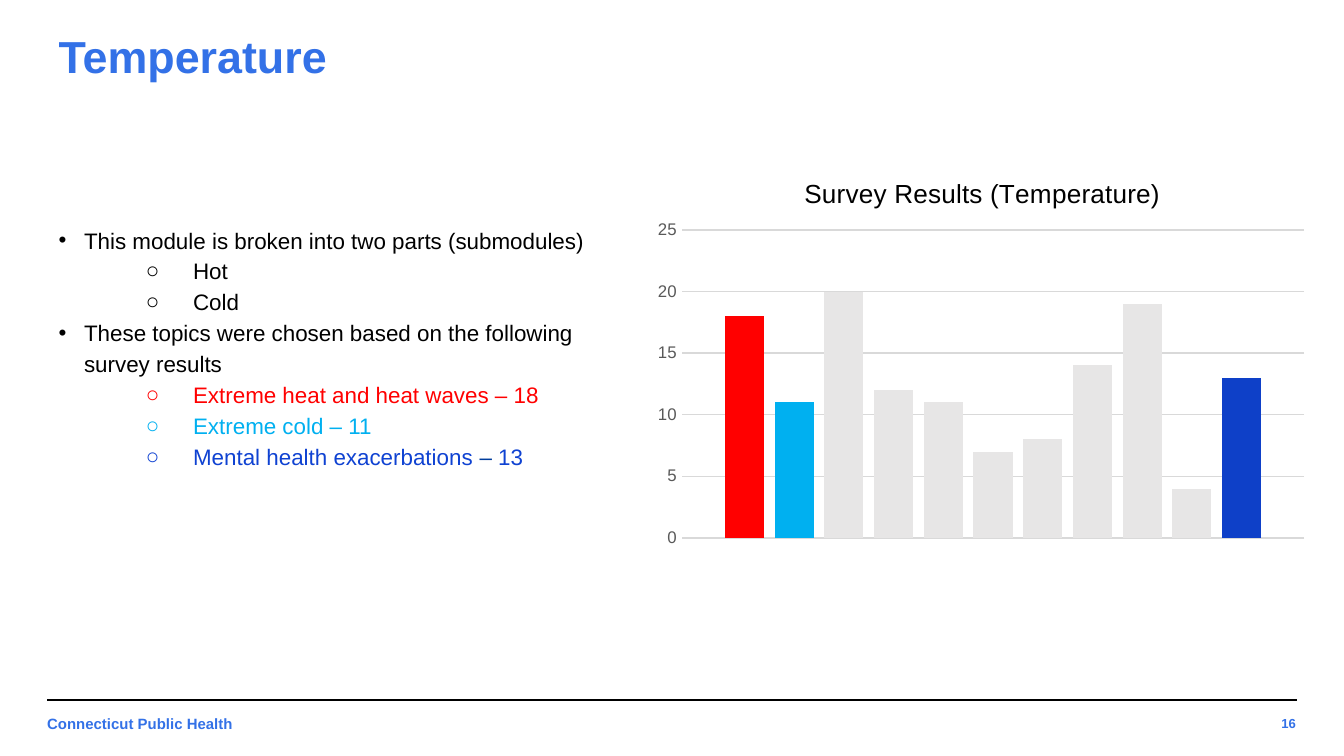
from dataclasses import dataclass
from lxml.etree import SubElement
from pptx import Presentation
from pptx.chart.data import CategoryChartData as ChartData
from pptx.dml.color import RGBColor as RGB
from pptx.enum.chart import XL_CHART_TYPE as Kind, XL_TICK_MARK as Tick
from pptx.enum.text import MSO_ANCHOR as Anchor, PP_ALIGN as Align
from pptx.oxml import parse_xml
from pptx.oxml.ns import nsdecls, qn
from pptx.util import Cm, Pt


@dataclass(frozen=True)
class Theme:
    """Hold the colours and type sizes of the slide."""
    font: str = "Arial"
    brand: str = "3371E7"
    ink: str = "000000"
    hot: str = "FF0000"
    cold: str = "00B0F0"
    mind: str = "0F42D2"
    dash: str = "003D9C"
    deep: str = "0E40C8"
    pale: str = "E7E6E6"
    grid: str = "D9D9D9"
    tick: str = "595959"
    title: float = 24
    head: float = 14
    body: float = 12
    axis: float = 9
    foot: float = 8
    page: float = 7


T = Theme()
POINTS = [
    (0, [("This module is broken into two parts (submodules)", T.ink)]),
    (1, [("Hot", T.ink)]),
    (1, [("Cold", T.ink)]),
    (0, [("These topics were chosen based on the following survey results", T.ink)]),
    (1, [("Extreme heat and heat waves – 18", T.hot)]),
    (1, [("Extreme cold – 11", T.cold)]),
    (1, [("Mental health exacerbations ", T.mind), ("– ", T.dash), ("13", T.mind)]),
]
VOTES = [18, 11, 20, 12, 11, 7, 8, 14, 19, 4, 13]
TINTS = {0: T.hot, 1: T.cold, 10: T.deep}


def style(font, size, tint, bold=False):
    """Set the face, size, colour and weight of a font."""
    font.name, font.size, font.bold = T.font, Pt(size), bold
    font.color.rgb = RGB.from_string(tint)


def add_run(para, text, size, tint, bold=False):
    """Append one styled run to a paragraph."""
    run = para.add_run()
    run.text = text
    style(run.font, size, tint, bold)


def add_frame(slide, box, anchor=Anchor.TOP):
    """Add a wrapping text box and return its text frame."""
    frame = slide.shapes.add_textbox(*map(Cm, box)).text_frame
    frame.word_wrap = True
    frame.vertical_anchor = anchor
    frame.margin_left = frame.margin_right = Cm(0.25)
    frame.margin_top = frame.margin_bottom = Cm(0.25)
    return frame


def add_label(slide, box, text, size, anchor=Anchor.MIDDLE, align=Align.LEFT):
    """Place one bold line in the brand colour."""
    para = add_frame(slide, box, anchor).paragraphs[0]
    para.alignment = align
    add_run(para, text, size, T.brand, True)


def add_points(slide, box):
    """Place the two-level bullet list."""
    frame = add_frame(slide, box)
    for i, (level, runs) in enumerate(POINTS):
        para = frame.paragraphs[0] if i == 0 else frame.add_paragraph()
        para.level, para.line_spacing = level, 1.15
        left, hang, mark = ((0.48, 0.48, "•"), (2.54, 0.89, "○"))[level]
        props = para._p.get_or_add_pPr()
        props.set("marL", str(Cm(left)))
        props.set("indent", str(-Cm(hang)))
        SubElement(props, qn("a:buFont")).set("typeface", T.font)
        SubElement(props, qn("a:buChar")).set("char", mark)
        for text, tint in runs:
            add_run(para, text, T.body, tint)


def set_place(parent, after, x, y, size=None):
    """Pin a chart part at fractions of the chart area."""
    for old in parent.findall(qn("c:layout")):
        parent.remove(old)
    vals = [("xMode", "edge"), ("yMode", "edge"), ("x", x), ("y", y)]
    if size:
        vals = [("layoutTarget", "inner")] + vals + list(zip("wh", size))
    parts = "".join(f'<c:{tag} val="{val}"/>' for tag, val in vals)
    place = parse_xml(f'<c:layout {nsdecls("c")}><c:manualLayout>{parts}'
                      '</c:manualLayout></c:layout>')
    if after is None:
        parent.insert(0, place)
    else:
        after.addnext(place)


def add_survey(slide, box):
    """Place the survey column chart."""
    data = ChartData()
    data.categories = ["1"]
    for i, vote in enumerate(VOTES, 1):
        data.add_series(f"Series {i}", [vote])
    chart = slide.shapes.add_chart(Kind.COLUMN_CLUSTERED, *map(Cm, box), data).chart
    style(chart.font, 10, T.ink)
    chart.has_legend = False
    add_run(chart.chart_title.text_frame.paragraphs[0],
            "Survey Results (Temperature)", T.head, T.ink)
    head = chart.chart_title._element
    set_place(head, head.find(qn("c:tx")), 0.23, 0.05)
    set_place(chart._chartSpace.chart.plotArea, None, 0.055, 0.194, (0.926, 0.764))
    chart.category_axis.visible = False
    axis = chart.value_axis
    axis.minimum_scale, axis.maximum_scale, axis.major_unit = 0, 25, 5
    axis.major_tick_mark = axis.minor_tick_mark = Tick.NONE
    axis.format.line.fill.background()
    style(axis.tick_labels.font, T.axis, T.tick)
    line = axis.major_gridlines.format.line
    line.width = Pt(0.75)
    line.color.rgb = RGB.from_string(T.grid)
    plot = chart.plots[0]
    plot.gap_width, plot.overlap, plot.vary_by_categories = 219, -27, False
    for i, bar in enumerate(plot.series):
        bar.format.fill.solid()
        bar.format.fill.fore_color.rgb = RGB.from_string(TINTS.get(i, T.pale))


def add_foot(slide, box):
    """Place the rule, the sender and the page number."""
    left, top, width, height = box
    rule = slide.shapes.add_connector(1, *map(Cm, (left, top, left + width, top)))
    rule.line.width = Pt(0.75)
    rule.line.color.rgb = RGB.from_string(T.ink)
    SubElement(rule._element.spPr, qn("a:effectLst"))
    add_label(slide, (left - 0.25, top + 0.1, 8.33, 0.86),
              "Connecticut Public Health", T.foot, Anchor.TOP)
    add_label(slide, (left + width - 1.3, top + 0.13, 1.53, height),
              "16", T.page, align=Align.RIGHT)


def main():
    """Build the slide and save it."""
    deck = Presentation()
    deck.slide_width, deck.slide_height = Cm(25.4), Cm(14.29)
    slide = deck.slides.add_slide(deck.slide_layouts[6])
    add_foot(slide, (0.89, 13.23, 23.62, 0.64))
    add_label(slide, (0.86, 0.64, 23.67, 0.84), "Temperature", T.title)
    add_points(slide, (0.86, 3.96, 11.1, 5.44))
    add_survey(slide, (12.19, 2.87, 12.7, 7.62))
    deck.save("out.pptx")


if __name__ == "__main__":
    main()
